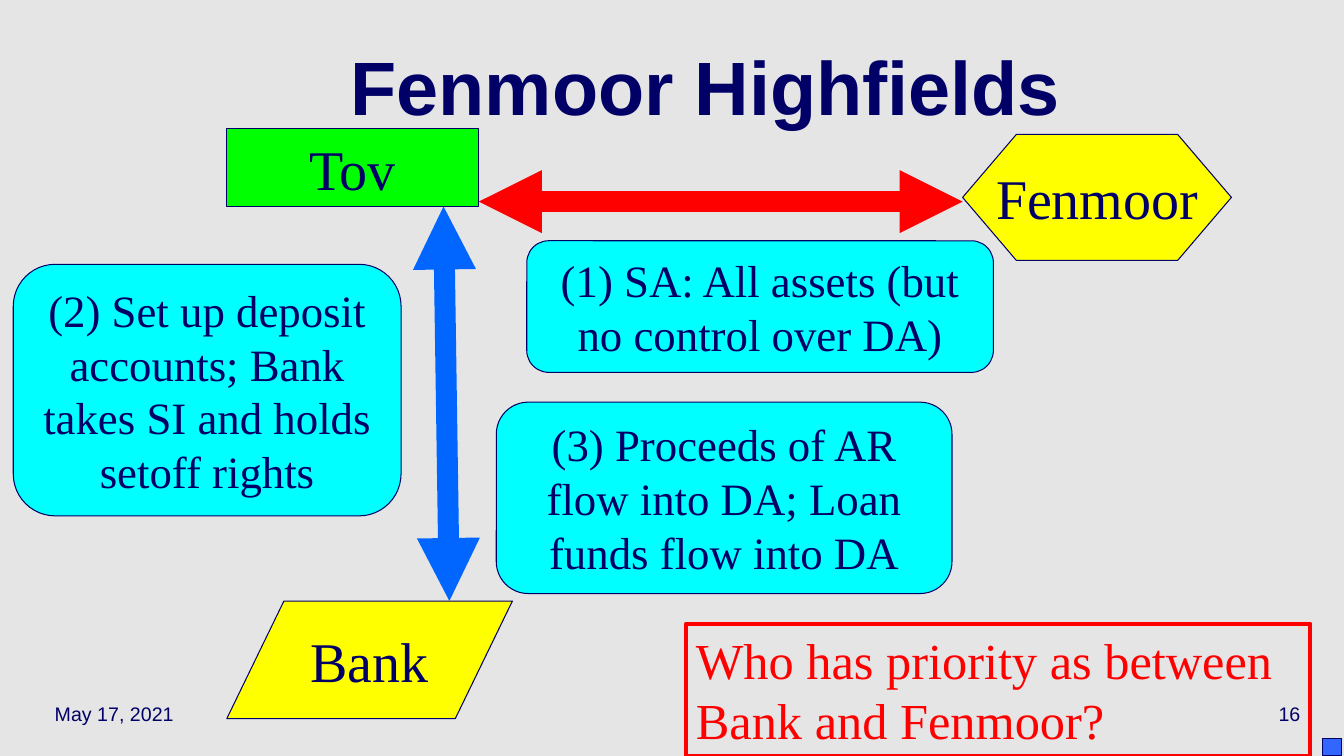
"""Build the Fenmoor Highfields slide on competing security interests."""
from lxml import etree
from pptx import Presentation
from pptx.dml.color import RGBColor
from pptx.enum import shapes, text
from pptx.oxml import ns
from pptx.util import Pt

NAVY = RGBColor(0x00, 0x00, 0x66)
YELLOW = RGBColor(0xFF, 0xFF, 0x00)
GREEN = RGBColor(0x00, 0xFF, 0x00)
CYAN = RGBColor(0x00, 0xFF, 0xFF)
RED = RGBColor(0xFF, 0x00, 0x00)
BLUE = RGBColor(0x00, 0x66, 0xFF)
CORNER_BLUE = RGBColor(0x33, 0x66, 0xFF)
GRAY = RGBColor(0xE5, 0xE5, 0xE5)
SERIF, SANS = "Times New Roman", "Arial"
KINDS = shapes.MSO_SHAPE
LEFT, CENTER, RIGHT = text.PP_ALIGN.LEFT, text.PP_ALIGN.CENTER, text.PP_ALIGN.RIGHT
TOP, MIDDLE = text.MSO_ANCHOR.TOP, text.MSO_ANCHOR.MIDDLE


def write(holder, words, size=32, font=SERIF, color=NAVY, bold=False,
          align=CENTER, anchor=MIDDLE, wrap=True, spacing=None):
    frame = holder.text_frame
    frame.word_wrap = wrap
    frame.auto_size = text.MSO_AUTO_SIZE.NONE
    frame.vertical_anchor = anchor
    paragraph = frame.paragraphs[0]
    paragraph.alignment = align
    paragraph.line_spacing = spacing
    run = paragraph.add_run()
    run.text = words
    run.font.size = Pt(size)
    run.font.name = font
    run.font.bold = bold
    run.font.color.rgb = color


def draw(kind, box, fill=None, line=NAVY, width=0.75):
    shape = slide.shapes.add_shape(kind, *map(Pt, box))
    shape.shadow.inherit = False
    if fill is None:
        shape.fill.background()
    else:
        shape.fill.solid()
        shape.fill.fore_color.rgb = fill
    shape.line.color.rgb = line
    shape.line.width = Pt(width)
    return shape


deck = Presentation()
deck.slide_width, deck.slide_height = Pt(960), Pt(540)
slide = deck.slides.add_slide(deck.slide_layouts[5])
slide.background.fill.solid()
slide.background.fill.fore_color.rgb = GRAY

for words, left, align in (("May 17, 2021", 32, LEFT), ("16", 736, RIGHT)):
    footer = slide.shapes.add_textbox(Pt(left), Pt(492), Pt(200), Pt(36))
    write(footer, words, size=14, font=SANS, align=align)

title = slide.shapes.title
title.left, title.top, title.width, title.height = map(Pt, (64, 24, 880, 90))
write(title, "Fenmoor Highfields", size=54, font=SANS, bold=True, spacing=0.7)

parties = (
    ("Bank", KINDS.FLOWCHART_DATA, (162, 429.3, 204, 84), YELLOW),
    ("Tov", KINDS.FLOWCHART_PROCESS, (162, 92, 180, 55.5), GREEN),
    ("Fenmoor", KINDS.FLOWCHART_PREPARATION, (687.6, 96, 192, 90), YELLOW),
)
for name, kind, box, fill in parties:
    write(draw(kind, box, fill), name, size=40, wrap=False)

dealings = (((342, 144), (687.6, 144), RED), ((316.8, 147.5), (321, 429.3), BLUE))
for start, end, color in dealings:
    arrow = slide.shapes.add_connector(
        shapes.MSO_CONNECTOR.STRAIGHT, *map(Pt, start + end))
    arrow.line.color.rgb = color
    arrow.line.width = Pt(15)
    for tip in ("a:headEnd", "a:tailEnd"):
        etree.SubElement(arrow.line._get_or_add_ln(), ns.qn(tip), type="triangle")
    etree.SubElement(arrow._element.spPr, ns.qn("a:effectLst"))

steps = (
    ("(3) Proceeds of AR flow into DA; Loan funds flow into DA", (354.5, 287.3, 325.5, 136.7)),
    ("(1) SA: All assets (but no control over DA)", (376.3, 172, 333.3, 94)),
    ("(2) Set up deposit accounts; Bank takes SI and holds setoff rights", (9.5, 188.8, 277, 179.7)),
)
for words, box in steps:
    write(draw(KINDS.FLOWCHART_ALTERNATE_PROCESS, box, CYAN), words)

question = draw(KINDS.RECTANGLE, (490, 445.5, 446, 94.5), line=RED, width=3)
write(question, "Who has priority as between Bank and Fenmoor?",
      size=36, color=RED, align=LEFT, anchor=TOP)

draw(KINDS.RECTANGLE, (944.5, 527.8, 13.7, 12.2), CORNER_BLUE)

deck.save("out.pptx")
